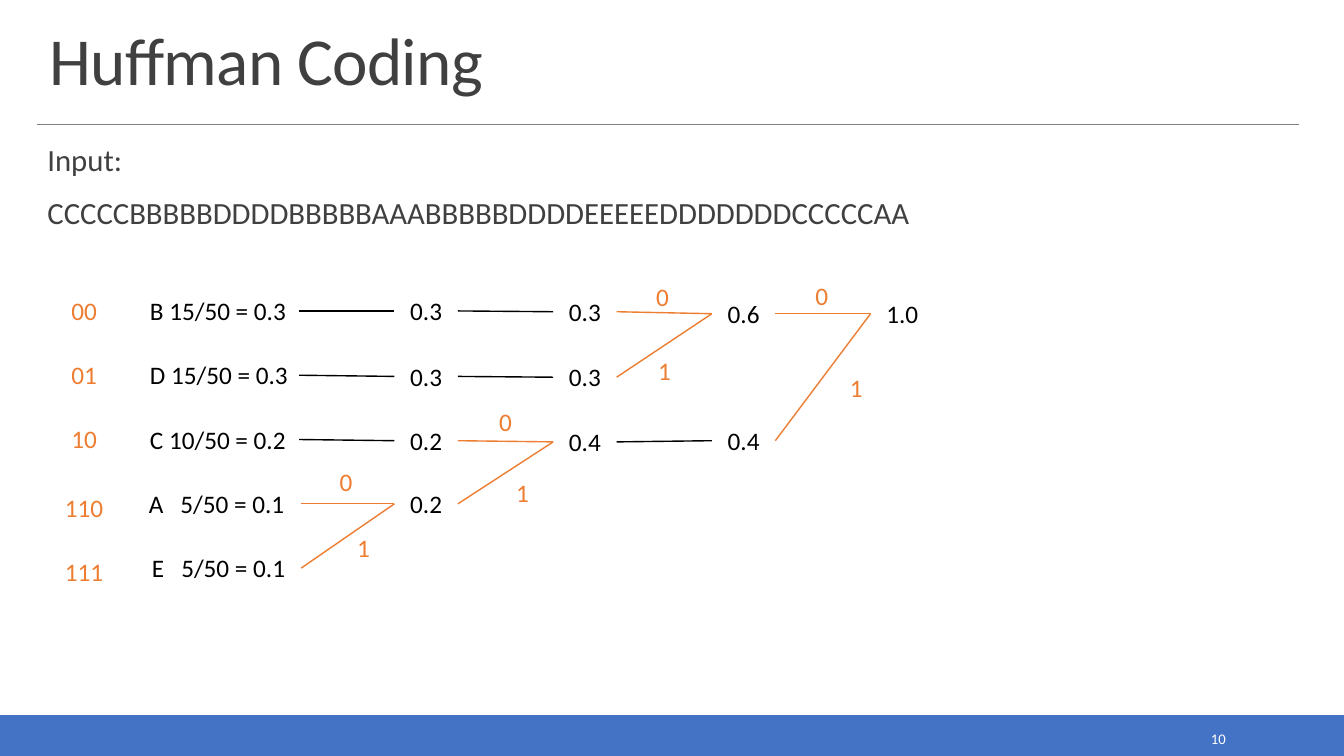
from dataclasses import dataclass
from pptx import Presentation
from pptx.dml.color import RGBColor
from pptx.enum import shapes, text
from pptx.oxml import ns, xmlchemy
from pptx.util import Cm, Pt

TITLE = "Huffman Coding"
INPUT = ["Input:", "CCCCCBBBBBDDDDBBBBBAAABBBBBDDDDEEEEEDDDDDDDCCCCCAA"]
PAGE = "10"

# symbol: (label, code, left, right, code top)
SYMBOLS = {
    "B": ("B 15/50 = 0.3", "00", 3.53, 7.54, 7.32),
    "D": ("D 15/50 = 0.3", "01", 3.53, 7.54, 8.93),
    "C": ("C 10/50 = 0.2", "10", 3.53, 7.54, 10.54),
    "A": ("A   5/50 = 0.1", "110", 3.5, 7.59, 12.29),
    "E": ("E   5/50 = 0.1", "111", 3.58, 7.59, 13.9),
}
# node: (weight, merge step, row, drop below the row)
NODES = {
    "B1": ("0.3", 0, 0, 0), "D1": ("0.3", 0, 1, 0.03),
    "C1": ("0.2", 0, 2, 0.03), "AE": ("0.2", 0, 3, 0),
    "B2": ("0.3", 1, 0, 0.02), "D2": ("0.3", 1, 1, 0.05),
    "CAE": ("0.4", 1, 2, 0.06),
    "BD": ("0.6", 2, 0, 0.07), "CAE2": ("0.4", 2, 2, 0.03),
    "ROOT": ("1.0", 3, 0, 0.07),
}
CARRIED = [("B", "B1"), ("D", "D1"), ("C", "C1"),
           ("B1", "B2"), ("D1", "D2"), ("CAE", "CAE2")]
# branch: (child, parent, bit, bit left, bit top)
BRANCHES = [
    ("A", "AE", "0", 7.92, 11.63), ("E", "AE", "1", 8.36, 13.28),
    ("C1", "CAE", "0", 11.94, 10.11), ("AE", "CAE", "1", 12.37, 11.91),
    ("B2", "BD", "0", 15.9, 6.96), ("D2", "BD", "1", 15.95, 8.84),
    ("BD", "ROOT", "0", 19.91, 6.93), ("CAE2", "ROOT", "1", 20.78, 9.25),
]


@dataclass(frozen=True)
class Theme:
    font: str = "Calibri"
    heading: RGBColor = RGBColor(0x40, 0x40, 0x40)
    ink: RGBColor = RGBColor(0, 0, 0)
    code: RGBColor = RGBColor(0xED, 0x7D, 0x31)
    bar: RGBColor = RGBColor(0x44, 0x72, 0xC4)
    rule: RGBColor = RGBColor(0x80, 0x80, 0x80)
    paper: RGBColor = RGBColor(0xFF, 0xFF, 0xFF)
    title_size: float = 48
    input_size: float = 22
    tree_size: float = 18
    page_size: float = 10.5


THEME = Theme()
ROW_TOP, ROW_STEP = 7.32, 1.62
NODE_LEFT, NODE_STEP = 9.94, 4
NODE_WIDTH, NODE_HEIGHT = 1.6, 1.03
CODE_LEFT = 1.32
RIGHT_SIDE, LEFT_SIDE = 3, 1


def write(paragraph, words, size, color, align=text.PP_ALIGN.LEFT):
    paragraph.alignment = align
    run = paragraph.add_run()
    run.text = words
    run.font.name, run.font.size = THEME.font, Pt(size)
    run.font.color.rgb = color
    return run


def place(shape, left, top, width, height):
    shape.left, shape.top = Cm(left), Cm(top)
    shape.width, shape.height = Cm(width), Cm(height)


def label(slide, words, left, top, width=NODE_WIDTH, color=THEME.ink,
          align=text.PP_ALIGN.CENTER):
    box = slide.shapes.add_textbox(Cm(left), Cm(top), Cm(width), Cm(NODE_HEIGHT))
    box.text_frame.word_wrap = True
    box.text_frame.auto_size = text.MSO_AUTO_SIZE.SHAPE_TO_FIT_TEXT
    write(box.text_frame.paragraphs[0], words, THEME.tree_size, color, align)
    return box


def connect(slide, color, width, start=(0, 0), end=(0, 0)):
    line = slide.shapes.add_connector(
        shapes.MSO_CONNECTOR.STRAIGHT, *map(Cm, start), *map(Cm, end))
    line.line.color.rgb, line.line.width = color, Pt(width)
    effects = xmlchemy.OxmlElement("a:effectLst")
    line._element.find(ns.qn("p:spPr")).append(effects)
    return line


def add_frame(slide):
    bar = slide.shapes.add_shape(
        shapes.MSO_SHAPE.RECTANGLE, 0, Cm(18.03), Cm(33.87), Cm(1.02))
    bar.shadow.inherit = False
    bar.fill.solid()
    bar.fill.fore_color.rgb = bar.line.color.rgb = THEME.bar
    bar.line.width = Pt(1.25)
    connect(slide, THEME.rule, 0.5, (0.94, 3.13), (32.74, 3.13))
    page = slide.shapes.add_textbox(Cm(27.51), Cm(18.26), Cm(3.63), Cm(0.71))
    page.text_frame.word_wrap = True
    page.text_frame.vertical_anchor = text.MSO_ANCHOR.MIDDLE
    write(page.text_frame.paragraphs[0], PAGE, THEME.page_size, THEME.paper,
          text.PP_ALIGN.RIGHT)


def add_headings(slide):
    title, body = slide.placeholders
    place(title, 0.99, 0.51, 31.8, 2.13)
    place(body, 0.94, 3.53, 31.8, 3.4)
    for holder, anchor in ((title, text.MSO_ANCHOR.BOTTOM),
                           (body, text.MSO_ANCHOR.TOP)):
        holder.text_frame.auto_size = text.MSO_AUTO_SIZE.NONE
        holder.text_frame.vertical_anchor = anchor
    heading = title.text_frame.paragraphs[0]
    heading.line_spacing = 0.85
    run = write(heading, TITLE, THEME.title_size, THEME.heading)
    run.font._element.set("spc", "-50")
    for index, words in enumerate(INPUT):
        frame = body.text_frame
        line = frame.add_paragraph() if index else frame.paragraphs[0]
        write(line, words, THEME.input_size, THEME.heading)
        line.line_spacing = 0.9
        line.space_before, line.space_after = Pt(12), Pt(2)
        properties = line._p.get_or_add_pPr()
        properties.set("marL", "0")
        properties.set("indent", "0")
        properties.append(xmlchemy.OxmlElement("a:buNone"))


def add_tree(slide):
    boxes = {}
    for row, (symbol, (words, code, left, right, code_top)) in enumerate(SYMBOLS.items()):
        boxes[symbol] = label(slide, words, left, ROW_TOP + row * ROW_STEP,
                              right - left, align=text.PP_ALIGN.LEFT)
        boxes[symbol].text_frame.margin_right = 0
        label(slide, code, CODE_LEFT, code_top, color=THEME.code)
    for node, (weight, step, row, drop) in NODES.items():
        boxes[node] = label(slide, weight, NODE_LEFT + step * NODE_STEP,
                            ROW_TOP + row * ROW_STEP + drop)
    edges = [(child, parent, THEME.ink) for child, parent in CARRIED]
    edges += [(child, parent, THEME.code) for child, parent, *_ in BRANCHES]
    for child, parent, color in edges:
        edge = connect(slide, color, 1)
        edge.begin_connect(boxes[child], RIGHT_SIDE)
        edge.end_connect(boxes[parent], LEFT_SIDE)
    for _, _, bit, left, top in BRANCHES:
        label(slide, bit, left, top, color=THEME.code)


def main():
    deck = Presentation()
    deck.slide_width, deck.slide_height = Cm(33.87), Cm(19.05)
    slide = deck.slides.add_slide(deck.slide_layouts[1])
    add_frame(slide)
    add_headings(slide)
    add_tree(slide)
    deck.save("out.pptx")


if __name__ == "__main__":
    main()
